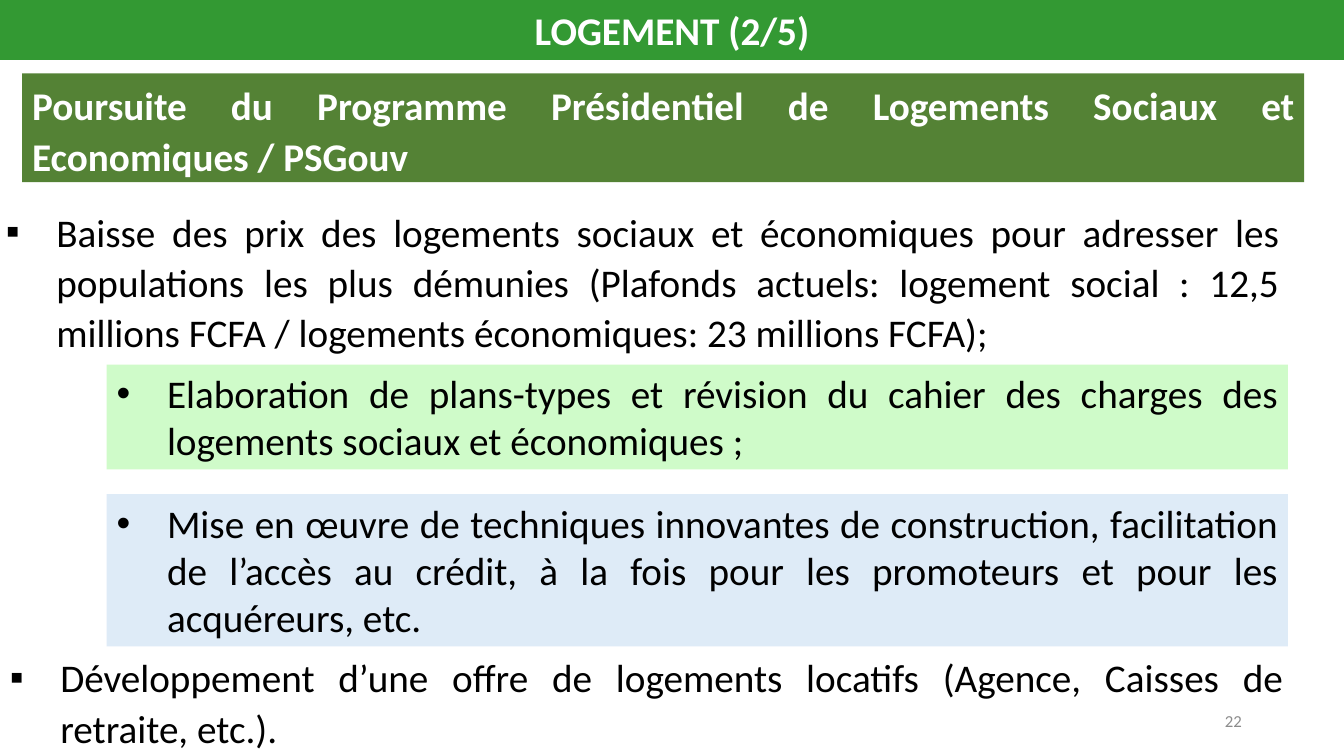
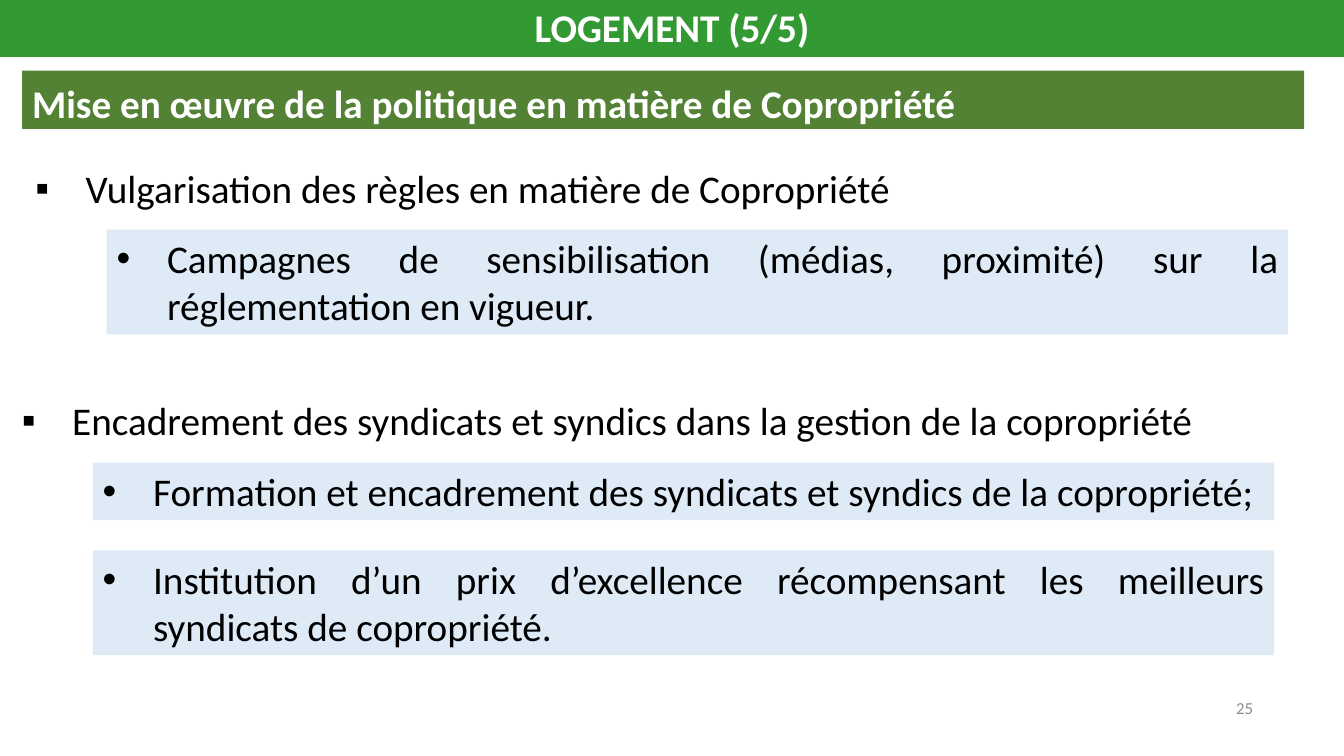
from lxml.etree import SubElement
from pptx import Presentation
from pptx.dml.color import RGBColor
from pptx.enum.shapes import MSO_SHAPE
from pptx.enum.text import MSO_ANCHOR, MSO_AUTO_SIZE, PP_ALIGN
from pptx.oxml.ns import qn
from pptx.util import Cm, Pt

COLORS = {
    "title_band": "339933",
    "heading_band": "548235",
    "green_box": "CFFBC9",
    "blue_box": "DEEBF7",
    "white": "FFFFFF",
    "black": "000000",
    "number": "8C8C8C",
}
FONT = "Calibri"
TEXT_SIZE = 28
NUMBER_SIZE = 12
SLIDE_WIDTH, SLIDE_HEIGHT = 33.87, 19.05
TITLE_HEIGHT = 1.5
HEADING_LEFT, HEADING_WIDTH = 0.56, 32.31
POINT_WIDTH = 32.59
BOX_WIDTH = 29.77
NUMBER_WIDTH, NUMBER_HEIGHT = 7.62, 1.02
BULLET_INDENT = Cm(1.27)


def color(name):
    return RGBColor.from_string(COLORS[name])


def add_band(slide, left, top, width, height, fill):
    shape = slide.shapes.add_shape(
        MSO_SHAPE.RECTANGLE, Cm(left), Cm(top), Cm(width), Cm(height))
    shape.shadow.inherit = False
    shape.fill.solid()
    shape.fill.fore_color.rgb = color(fill)
    shape.line.fill.background()
    return shape


def write(shape, text, font_color="black", size=TEXT_SIZE, bold=False,
          align=PP_ALIGN.JUSTIFY, anchor=MSO_ANCHOR.TOP, grow=True):
    """Fill the shape with one formatted paragraph and return it."""
    frame = shape.text_frame
    frame.text = text
    frame.word_wrap = True
    frame.vertical_anchor = anchor
    frame.auto_size = (MSO_AUTO_SIZE.SHAPE_TO_FIT_TEXT if grow
                       else MSO_AUTO_SIZE.NONE)
    paragraph = frame.paragraphs[0]
    paragraph.alignment = align
    font = paragraph.runs[0].font
    font.name = FONT
    font.size = Pt(size)
    font.bold = bold
    font.color.rgb = color(font_color)
    return paragraph


def space_lines(paragraph):
    paragraph.line_spacing = 1.07
    paragraph.space_after = Pt(8)


def add_bullet(paragraph, character):
    properties = paragraph._p.get_or_add_pPr()
    properties.set("marL", str(BULLET_INDENT))
    properties.set("indent", str(-BULLET_INDENT))
    SubElement(properties, qn("a:buFont"), typeface="Arial")
    SubElement(properties, qn("a:buChar"), char=character)


def add_title(slide, text, top):
    band = add_band(slide, 0, top, SLIDE_WIDTH, TITLE_HEIGHT, "title_band")
    band.line.color.rgb = color("title_band")
    band.line.width = Pt(1)
    write(band, text, "white", bold=True, align=PP_ALIGN.CENTER,
          anchor=MSO_ANCHOR.MIDDLE, grow=False)


def add_heading(slide, text, top, height):
    band = add_band(slide, HEADING_LEFT, top, HEADING_WIDTH, height,
                    "heading_band")
    space_lines(write(band, text, "white", bold=True))


def add_point(slide, text, left, top, height):
    box = slide.shapes.add_textbox(
        Cm(left), Cm(top), Cm(POINT_WIDTH), Cm(height))
    paragraph = write(box, text)
    space_lines(paragraph)
    add_bullet(paragraph, "▪")


def add_detail(slide, text, left, top, height, fill="blue_box"):
    """Add a coloured box that details the point above it."""
    box = add_band(slide, left, top, BOX_WIDTH, height, fill)
    add_bullet(write(box, text), "•")


def add_number(slide, text, left, top):
    box = slide.shapes.add_textbox(
        Cm(left), Cm(top), Cm(NUMBER_WIDTH), Cm(NUMBER_HEIGHT))
    write(box, text, "number", NUMBER_SIZE, align=PP_ALIGN.RIGHT,
          anchor=MSO_ANCHOR.MIDDLE, grow=False)


def build_social_housing(slide):
    add_title(slide, "LOGEMENT (2/5)", 0)
    add_heading(slide, "Poursuite du Programme Présidentiel de Logements "
                "Sociaux et Economiques / PSGouv", 1.85, 2.74)
    add_point(slide, "Baisse des prix des logements sociaux et économiques "
              "pour adresser les populations les plus démunies (Plafonds "
              "actuels: logement social : 12,5 millions FCFA / logements "
              "économiques: 23 millions FCFA);", -0.1, 5.03, 4.09)
    add_detail(slide, "Elaboration de plans-types et révision du cahier des "
               "charges des logements sociaux et économiques ;",
               2.69, 9.19, 2.64, "green_box")
    add_detail(slide, "Mise en œuvre de techniques innovantes de "
               "construction, facilitation de l’accès au crédit, à la fois "
               "pour les promoteurs et pour les acquéreurs, etc.",
               2.69, 12.45, 3.84)
    add_point(slide, "Développement d’une offre de logements locatifs "
              "(Agence, Caisses de retraite, etc.).", 0, 16.26, 2.82)
    add_number(slide, "22", 23.93, 17.65)


def build_co_ownership(slide):
    add_title(slide, "LOGEMENT (5/5)", -0.08)
    add_heading(slide, "Mise en œuvre de la politique en matière de "
                "Copropriété", 1.78, 1.47)
    add_point(slide, "Vulgarisation des règles en matière de Copropriété",
              0.64, 3.94, 1.55)
    add_detail(slide, "Campagnes de sensibilisation (médias, proximité) sur "
               "la réglementation en vigueur.", 2.69, 5.79, 2.64)
    add_point(slide, "Encadrement des syndicats et syndics dans la gestion "
              "de la copropriété", 0.3, 9.78, 1.47)
    add_detail(slide, "Formation et encadrement des syndicats et syndics de "
               "la copropriété;", 2.34, 11.66, 1.45)
    add_detail(slide, "Institution d’un prix d’excellence récompensant les "
               "meilleurs syndicats de copropriété.", 2.34, 13.87, 2.64)
    add_number(slide, "25", 24.21, 17.32)


def main():
    presentation = Presentation()
    presentation.slide_width = Cm(SLIDE_WIDTH)
    presentation.slide_height = Cm(SLIDE_HEIGHT)
    blank_layout = presentation.slide_layouts[6]
    for build in (build_social_housing, build_co_ownership):
        build(presentation.slides.add_slide(blank_layout))
    presentation.save("out.pptx")


if __name__ == "__main__":
    main()
